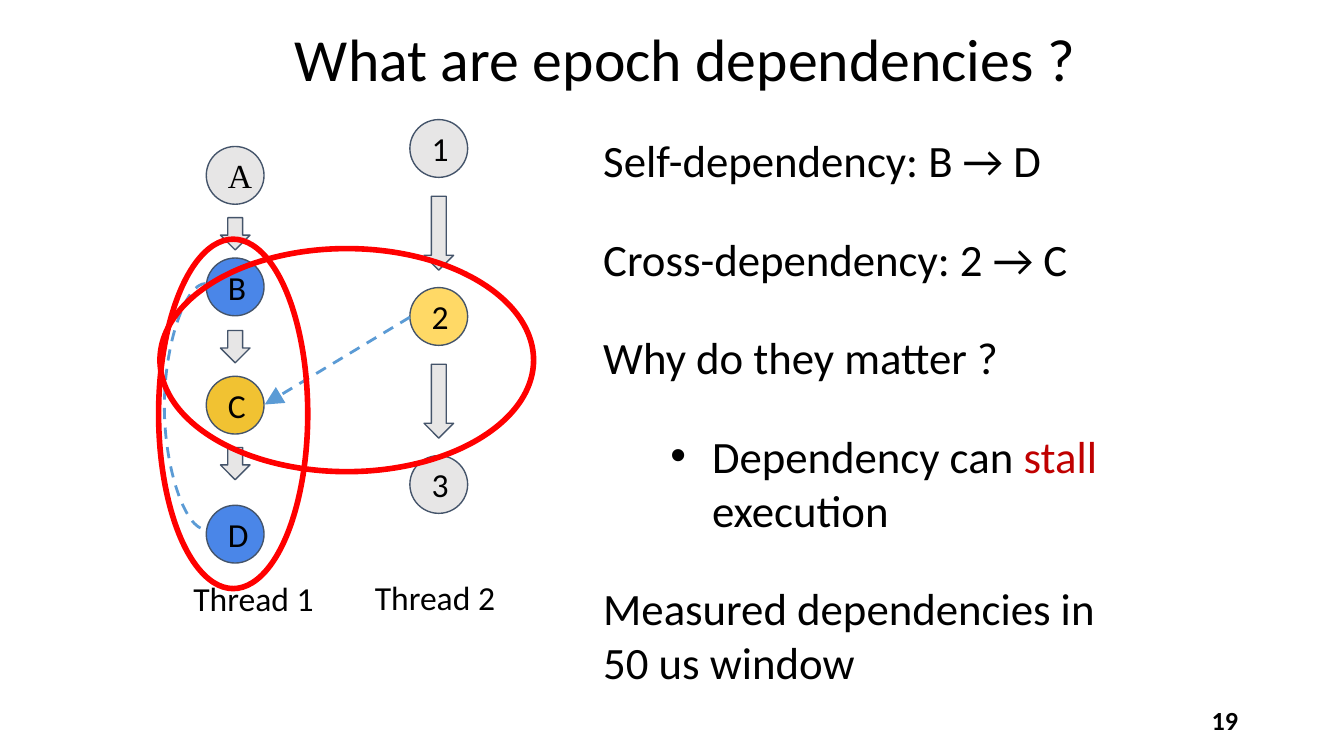
from lxml import etree
from pptx import Presentation
from pptx.dml.color import RGBColor
from pptx.enum.dml import MSO_LINE
from pptx.enum.shapes import MSO_CONNECTOR, MSO_SHAPE
from pptx.enum.text import MSO_ANCHOR, PP_ALIGN
from pptx.oxml.ns import qn
from pptx.util import Inches, Pt

OVAL, DOWN = MSO_SHAPE.OVAL, MSO_SHAPE.DOWN_ARROW
STRAIGHT, CURVE = MSO_CONNECTOR.STRAIGHT, MSO_CONNECTOR.CURVE
TOP, MIDDLE = MSO_ANCHOR.TOP, MSO_ANCHOR.MIDDLE
LEFT, CENTER, RIGHT = PP_ALIGN.LEFT, PP_ALIGN.CENTER, PP_ALIGN.RIGHT
DASH = MSO_LINE.DASH
GREY, BLUE, GOLD, YELLOW = "E7E6E6", "4A86E8", "F1C232", "FFD966"
SLATE, SKY, RED, DARK_RED = "44546A", "5B9BD5", "FF0000", "C00000"


def color(value):
    return RGBColor.from_string(value)


def cells(count):
    return Inches(count / 10)


def add_text(para, text, size=18, font="Calibri", ink="000000", bold=False):
    span = para.add_run()
    span.text = text
    span.font.size, span.font.name, span.font.bold = Pt(size), font, bold
    span.font.color.rgb = color(ink)


class Page:
    """Draws styled elements on one slide, on a grid of ten cells to the inch."""

    def __init__(self, slide):
        self.shapes = slide.shapes

    def frame(self, box, anchor=TOP, pad=1):
        frame = box.text_frame
        frame.word_wrap, frame.vertical_anchor = True, anchor
        frame.margin_left = frame.margin_right = cells(1)
        frame.margin_top = frame.margin_bottom = cells(pad)
        return frame

    def text(self, area, text="", align=LEFT, spacing=None, anchor=TOP, pad=1, **style):
        box = self.shapes.add_textbox(*map(cells, area))
        frame = self.frame(box, anchor, pad)
        para = frame.paragraphs[0]
        para.alignment, para.line_spacing = align, spacing
        if text:
            add_text(para, text, **style)
        return frame

    def shape(self, kind, area, fill=None, line=SLATE, width=0.75):
        shape = self.shapes.add_shape(kind, *map(cells, area))
        shape.shadow.inherit = False
        if fill:
            shape.fill.solid()
            shape.fill.fore_color.rgb = color(fill)
        else:
            shape.fill.background()
        shape.line.color.rgb, shape.line.width = color(line), Pt(width)
        return shape

    def epoch(self, center, top, label, fill, font="Calibri"):
        circle = self.shape(OVAL, (center - 2.15, top, 4.3, 4.3), fill)
        para = self.frame(circle, MIDDLE).paragraphs[0]
        para.alignment = LEFT
        add_text(para, label, font=font)

    def step(self, center, top, height):
        self.shape(DOWN, (center - 1.1, top, 2.2, height), GREY)

    def dependency(self, start, end, kind=STRAIGHT, bend=None, head=False):
        link = self.shapes.add_connector(kind, *map(cells, start + end))
        link.line.color.rgb, link.line.width = color(SKY), Pt(1.5)
        link.line.dash_style = DASH
        properties = link._element.spPr
        if head:
            etree.SubElement(properties.find(qn("a:ln")), qn("a:tailEnd"),
                             type="triangle", w="lg", len="lg")
        if bend is not None:
            guides = properties.find(qn("a:prstGeom")).find(qn("a:avLst"))
            etree.SubElement(guides, qn("a:gd"), name="adj1", fmla=f"val {bend * 100000}")
        etree.SubElement(properties, qn("a:effectLst"))

    def points(self, area, items):
        frame = self.text(area)
        for index, (bulleted, spans) in enumerate(items):
            para = frame.add_paragraph() if index else frame.paragraphs[0]
            para.space_before = para.space_after = Pt(12)
            if bulleted:
                para.level = 1
                properties = para._p.get_or_add_pPr()
                properties.set("marL", str(cells(8.1)))
                properties.set("indent", str(cells(-3.1)))
                etree.SubElement(properties, qn("a:buFont"), typeface="Arial")
                etree.SubElement(properties, qn("a:buChar"), char="•")
            for text, ink in spans:
                for line, part in enumerate(text.split("\n")):
                    if line:
                        para.add_line_break()
                    add_text(para, part, size=24, ink=ink)


def main():
    deck = Presentation()
    deck.slide_width = Inches(10)
    deck.slide_height = deck.slide_width * 9 // 16
    page = Page(deck.slides.add_slide(deck.slide_layouts[6]))

    page.text((7.9, 1.2, 86.2, 10.9), "What are epoch dependencies ?",
              align=CENTER, spacing=0.9, size=32)

    first, second = 17.5, 32.65
    page.epoch(first, 10.9, "A", GREY, font="Times New Roman")
    for top, label, fill in ((19.2, "B", BLUE), (28, "C", GOLD), (37.6, "D", BLUE)):
        page.epoch(first, top, label, fill)
    for row, (label, fill) in enumerate((("1", GREY), ("2", YELLOW), ("3", GREY))):
        page.epoch(second, 8.9 + 12.5 * row, label, fill)
    for top in (16.2, 24.6, 33.3):
        page.step(first, top, 2.4)
    for top in (14.6, 27.1):
        page.step(second, top, 5.5)

    page.dependency((15.3, 21.1), (15.31, 39.4), kind=CURVE, bend=-260)
    page.dependency((30.5, 23.6), (19.7, 30.1), head=True)
    page.text((13.4, 42, 11.5, 4.8), "Thread 1")
    page.text((26.9, 41.9, 11.5, 4.8), "Thread 2")

    black = "000000"
    page.points((43.9, 8.9, 50.3, 14.6), (
        (False, [("Self-dependency: B → D", black)]),
        (False, [("Cross-dependency: 2 → C", black)]),
        (False, [("Why do they matter ?", black)]),
        (True, [("Dependency can ", black), ("stall ", DARK_RED), ("execution", black)]),
        (False, [("Measured dependencies in \n50 us window", black)]),
    ))
    page.text((70.6, 52.1, 22.5, 3), "19", align=RIGHT, anchor=MIDDLE, pad=0.5,
              size=14, bold=True)

    for area in ((11.8, 17.8, 11.1, 26), (11.9, 18.5, 27.8, 16.6)):
        page.shape(OVAL, area, line=RED, width=3)
    deck.save("out.pptx")


if __name__ == "__main__":
    main()
